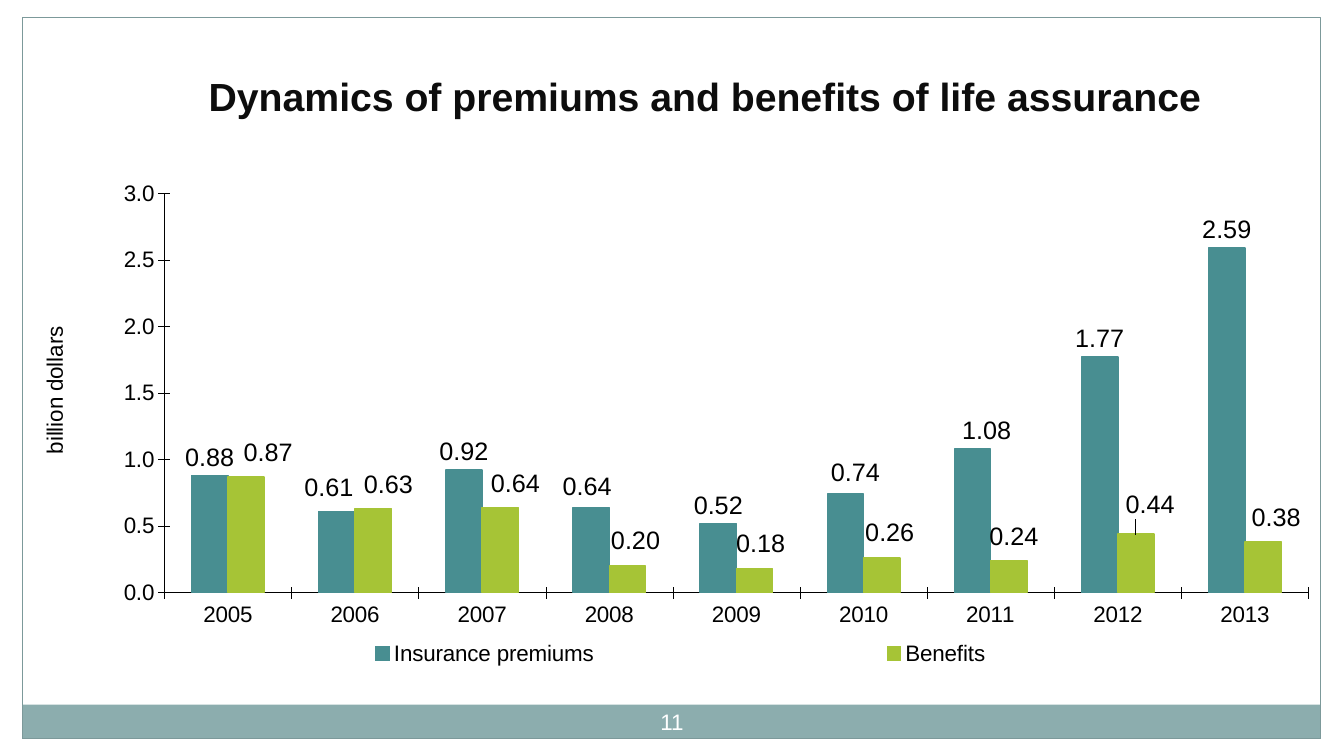
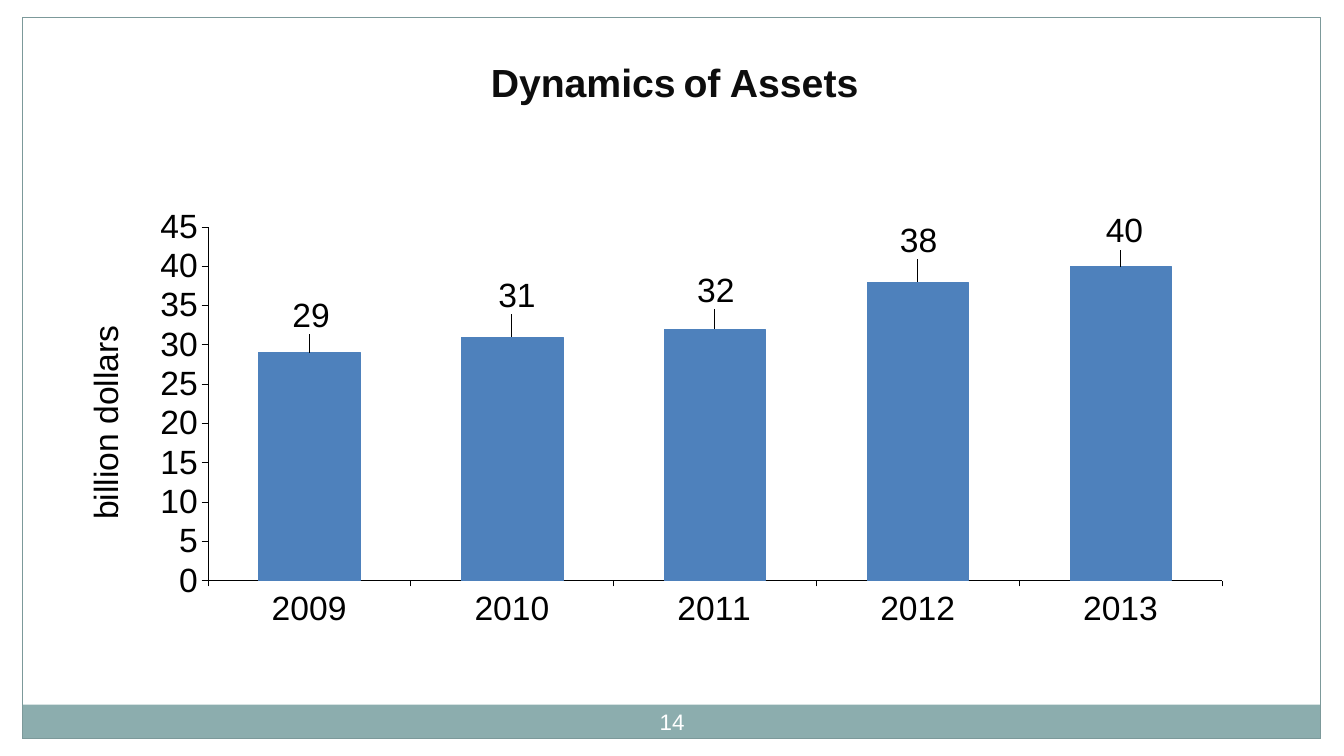
from dataclasses import dataclass

import pptx
import pptx.chart.data
import pptx.dml.color
import pptx.enum.chart
import pptx.enum.shapes
import pptx.enum.text
import pptx.oxml
import pptx.oxml.ns
import pptx.util
from pptx.util import Inches

Box = tuple[float, float, float, float]
Offset = tuple[float, float]


@dataclass(frozen=True)
class Theme:
    font: str = "Arial"
    white: str = "FFFFFF"
    black: str = "000000"
    title: str = "0D0D0D"
    band: str = "8CADAE"
    frame: str = "7C999A"
    teal: str = "488E91"
    green: str = "A6C436"
    blue: str = "4E81BC"
    title_pt: int = 28
    space_pt: int = 20
    number_pt: int = 16


@dataclass(frozen=True)
class Series:
    name: str
    color: str
    values: list[float]
    offsets: list[Offset]  # shift of each value label, in inches


@dataclass(frozen=True)
class ColumnChart:
    """Plot, legend and axis title are placed in inches from the chart's corner."""
    box: Box
    plot: Box
    axis_title: Offset
    years: range
    series: list[Series]
    size: int
    label_size: int
    axis_format: str
    label_format: str
    top: float
    step: float
    gap: int
    tick: pptx.enum.chart.XL_TICK_MARK
    axis_pt: float
    outline_pt: float
    legend: Box | None = None


@dataclass(frozen=True)
class ChartSlide:
    number: int
    title: list[tuple[str, int]]
    title_box: Box
    chart: ColumnChart


T = Theme()
TICK = pptx.enum.chart.XL_TICK_MARK

SLIDES = [
    ChartSlide(
        11,
        [("Dynamics of premiums and benefits of life assurance", T.title_pt)],
        (1, 0.21, 11.98, 1.02),
        ColumnChart(
            box=(0.31, 1.73, 12.67, 5.18), plot=(1.32, 0.19, 11.35, 3.96),
            axis_title=(0.05, 1.47),
            years=range(2005, 2014), size=16, label_size=18,
            axis_format="#,##0.0", label_format="#,##0.00",
            top=3, step=0.5, gap=150, tick=TICK.CROSS, axis_pt=0.21, outline_pt=1,
            legend=(0.58, 4.55, 11.72, 0.41),
            series=[
                Series("Insurance premiums", T.teal,
                       [0.88, 0.61, 0.92, 0.64, 0.52, 0.74, 1.08, 1.77, 2.59],
                       [(0, 0), (-0.08, -0.06), (0, 0), (-0.04, -0.03), (0, 0),
                        (0.1, -0.03), (0.14, 0), (0, 0), (0, 0)]),
                Series("Benefits", T.green,
                       [0.87, 0.63, 0.64, 0.2, 0.18, 0.26, 0.24, 0.44, 0.38],
                       [(0.22, -0.06), (0.15, -0.06), (0.15, -0.06), (0.08, -0.07),
                        (0.06, -0.07), (0.08, -0.07), (0.05, -0.06), (0.14, -0.11),
                        (0.13, -0.06)]),
            ],
        ),
    ),
    ChartSlide(
        14,
        [("Dynamics", T.title_pt), (" ", T.space_pt), ("of Assets", T.title_pt)],
        (3.77, 0.11, 5.84, 0.99),
        ColumnChart(
            box=(0.67, 1.52, 11.7, 5.98), plot=(1.39, 0.73, 10.06, 3.51),
            axis_title=(0.1, 1.65),
            years=range(2009, 2014), size=24, label_size=24,
            axis_format="#,##0", label_format="#,##0",
            top=45, step=5, gap=100, tick=TICK.OUTSIDE, axis_pt=0.25, outline_pt=0.25,
            series=[
                Series("Series 1", T.blue, [29, 31, 32, 38, 40],
                       [(0.02, -0.14), (0.05, -0.18), (0.01, -0.15), (0.01, -0.18),
                        (0.04, -0.12)]),
            ],
        ),
    ),
]


def rgb(color: str) -> pptx.dml.color.RGBColor:
    return pptx.dml.color.RGBColor.from_string(color)


def inches(box: Box) -> list[Inches]:
    return [Inches(v) for v in box]


def set_font(font, size: float, color: str, bold: bool = False) -> None:
    font.name, font.size, font.bold = T.font, pptx.util.Pt(size), bold
    font.color.rgb = rgb(color)


def chart_xml(tag: str, content: str = "", attrs: str = ""):
    return pptx.oxml.parse_xml(
        f"<c:{tag} {pptx.oxml.ns.nsdecls('c', 'a')} {attrs}>{content}</c:{tag}>")


def set_layout(parent, index: int, **values: object) -> None:
    """Give a chart part a manual layout at the child index its schema asks for."""
    for old in parent.findall(pptx.oxml.ns.qn("c:layout")):
        parent.remove(old)
    content = "".join(f'<c:{k} val="{v}"/>' for k, v in values.items())
    parent.insert(index, chart_xml("layout", f"<c:manualLayout>{content}</c:manualLayout>"))


def place(parent, index: int, area: tuple[float, ...], c: ColumnChart, **target: str) -> None:
    """Place a chart part at an area in inches, as fractions of the chart."""
    parts = {k: v / full for k, v, full in zip("xywh", area, c.box[2:] * 2)}
    set_layout(parent, index, **target, xMode="edge", yMode="edge", **parts)


def add_master_frame(prs, s) -> None:
    """Draw margins, band and frame once and move them to the back of the master."""
    for index, (box, fill, line) in enumerate([
        ((0, 0, 13.33, 0.17), T.white, None),
        ((13.11, 0, 0.22, 7.5), T.white, None),
        ((0, 0, 0.22, 7.5), T.white, None),
        ((0.22, 6.99, 12.88, 0.34), T.band, None),
        ((0.22, 0.17, 12.88, 7.16), None, T.frame),
    ]):
        sp = s.shapes.add_shape(pptx.enum.shapes.MSO_SHAPE.RECTANGLE, *inches(box))
        sp.shadow.inherit = False
        for part, color in ((sp.fill, fill), (sp.line.fill, line)):
            if color:
                part.solid()
                part.fore_color.rgb = rgb(color)
            else:
                part.background()
        if line:
            sp.line.width = pptx.util.Pt(0.75)
        prs.slide_master.shapes.element.insert(2 + index, sp.element)


def add_title(s, runs: list[tuple[str, int]], box: Box) -> None:
    sp = s.shapes.title
    sp.left, sp.top, sp.width, sp.height = inches(box)
    tf = sp.text_frame
    tf.auto_size = pptx.enum.text.MSO_AUTO_SIZE.NONE
    tf.vertical_anchor = pptx.enum.text.MSO_ANCHOR.BOTTOM
    p = tf.paragraphs[0]
    p.alignment = pptx.enum.text.PP_ALIGN.CENTER
    for text, size in runs:
        r = p.add_run()
        r.text = text
        set_font(r.font, size, T.title, bold=True)


def add_number(s, number: int) -> None:
    tf = s.shapes.add_textbox(*inches((6.22, 6.92, 0.89, 0.48))).text_frame
    tf.word_wrap = True
    tf.vertical_anchor = pptx.enum.text.MSO_ANCHOR.MIDDLE
    tf.margin_left = tf.margin_right = tf.margin_top = tf.margin_bottom = Inches(0.05)
    p = tf.paragraphs[0]
    p.alignment = pptx.enum.text.PP_ALIGN.CENTER
    r = p.add_run()
    r.text = str(number)
    set_font(r.font, T.number_pt, T.white)


def format_axes(chart, c: ColumnChart) -> None:
    for axis in (chart.category_axis, chart.value_axis):
        axis.has_major_gridlines = False
        axis.major_tick_mark = c.tick
        axis.minor_tick_mark = TICK.NONE
        axis.format.line.color.rgb = rgb(T.black)
        axis.format.line.width = pptx.util.Pt(c.axis_pt)
        set_font(axis.tick_labels.font, c.size, T.black)
    axis = chart.value_axis
    axis.minimum_scale, axis.maximum_scale, axis.major_unit = 0, c.top, c.step
    axis.tick_labels.number_format = c.axis_format
    axis.tick_labels.number_format_is_linked = False
    p = axis.axis_title.text_frame.paragraphs[0]
    r = p.add_run()
    r.text = "billion dollars"
    set_font(r.font, c.size, T.black)
    place(chart.element.xpath(".//c:valAx/c:title")[0], 1, c.axis_title, c)


def hide_leader_lines(chart) -> None:
    for labels in chart.element.xpath(".//c:ser/c:dLbls"):
        labels.append(chart_xml(
            "extLst",
            '<c:ext uri="{CE6537A1-D6FC-4f65-9D91-7224C49458BB}" '
            'xmlns:c15="http://schemas.microsoft.com/office/drawing/2012/chart">'
            '<c15:showLeaderLines val="0"/></c:ext>'))


def format_series(chart, c: ColumnChart) -> None:
    outside = pptx.enum.chart.XL_LABEL_POSITION.OUTSIDE_END
    for ser, data in zip(chart.plots[0].series, c.series):
        ser.format.fill.solid()
        ser.format.fill.fore_color.rgb = rgb(data.color)
        ser.format.line.color.rgb = rgb(data.color)
        ser.format.line.width = pptx.util.Pt(c.outline_pt)
        labels = ser.data_labels
        labels.show_value = True
        labels.number_format = c.label_format
        labels.number_format_is_linked = False
        labels.position = outside
        set_font(labels.font, c.label_size, T.black)
        for i in range(len(data.values)):
            label = ser.points[i].data_label
            set_font(label.font, c.label_size, T.black)
            label.position = outside
    offsets = [o for data in c.series for o in data.offsets]
    width, height = c.box[2:]
    for label, (dx, dy) in zip(chart.element.xpath(".//c:dLbl"), offsets):
        label.insert(1, chart_xml(
            "numFmt", attrs=f'formatCode="{c.label_format}" sourceLinked="0"'))
        if dx or dy:
            set_layout(label, 1, x=dx / width, y=dy / height)
    hide_leader_lines(chart)


def add_column_chart(s, c: ColumnChart) -> None:
    data = pptx.chart.data.CategoryChartData()
    data.categories = [str(year) for year in c.years]
    for ser in c.series:
        data.add_series(ser.name, ser.values)
    chart = s.shapes.add_chart(
        pptx.enum.chart.XL_CHART_TYPE.COLUMN_CLUSTERED, *inches(c.box), data).chart
    set_font(chart.font, c.size, T.black)
    chart.has_title = False
    plot = chart.plots[0]
    plot.gap_width, plot.overlap, plot.vary_by_categories = c.gap, 0, False
    format_axes(chart, c)
    format_series(chart, c)
    place(chart.element.xpath(".//c:plotArea")[0], 0, c.plot, c, layoutTarget="inner")
    chart.has_legend = c.legend is not None
    if c.legend:
        chart.legend.position = pptx.enum.chart.XL_LEGEND_POSITION.BOTTOM
        chart.legend.include_in_layout = False
        set_font(chart.legend.font, c.size, T.black)
        place(chart.element.xpath(".//c:legend")[0], 1, c.legend, c)
    chart.element.xpath("c:chart")[0].addnext(
        chart_xml("spPr", "<a:noFill/><a:ln><a:noFill/></a:ln>"))


def main() -> None:
    prs = pptx.Presentation()
    prs.slide_width, prs.slide_height = Inches(13.33), Inches(7.5)
    for index, content in enumerate(SLIDES):
        s = prs.slides.add_slide(prs.slide_layouts.get_by_name("Title Only"))
        if index == 0:
            add_master_frame(prs, s)
        add_title(s, content.title, content.title_box)
        add_column_chart(s, content.chart)
        add_number(s, content.number)
    prs.save("out.pptx")


if __name__ == "__main__":
    main()
